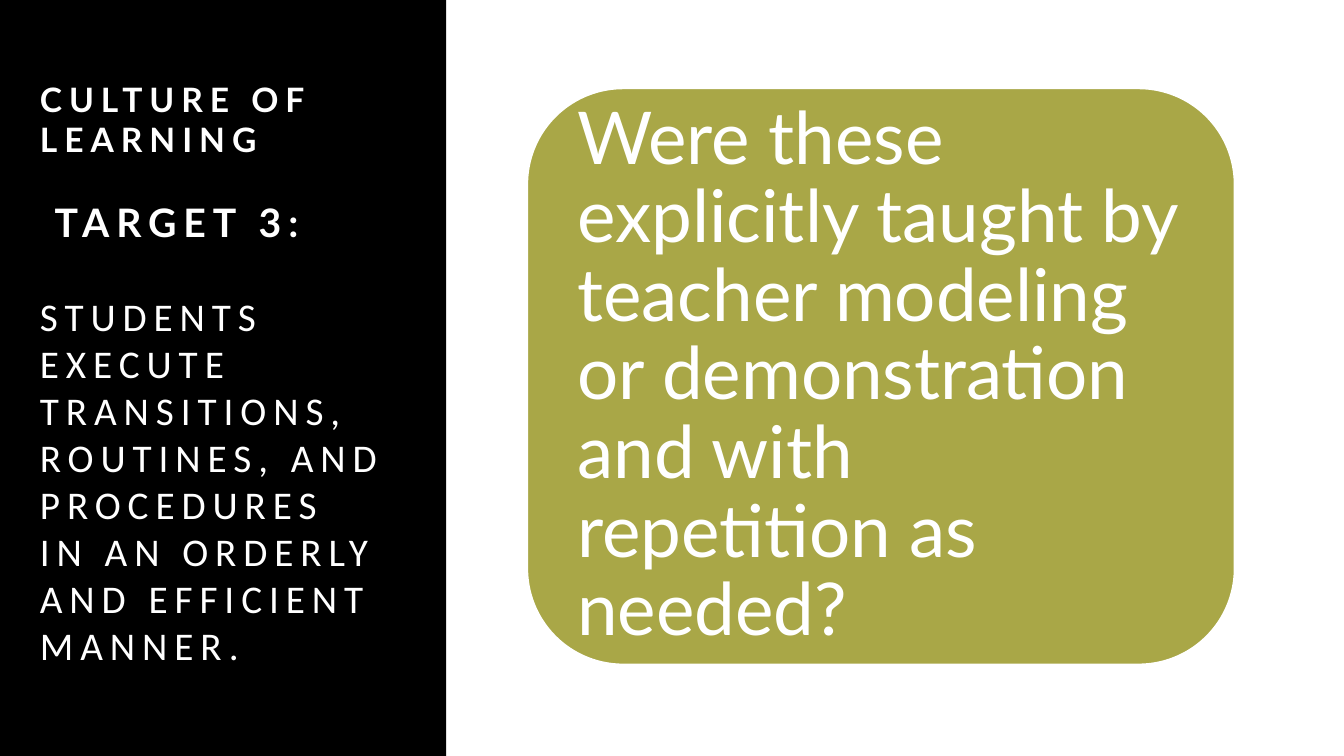
from dataclasses import dataclass

from pptx import Presentation
from pptx.dml.color import RGBColor
from pptx.enum.shapes import MSO_SHAPE
from pptx.enum.text import MSO_ANCHOR, PP_ALIGN
from pptx.util import Emu, Pt

EMU_PER_PX = 9525
BLACK = RGBColor(0x00, 0x00, 0x00)
WHITE = RGBColor(0xFF, 0xFF, 0xFF)
OLIVE = RGBColor(0xA9, 0xA7, 0x47)
RECTANGLE = MSO_SHAPE.RECTANGLE
ROUNDED = MSO_SHAPE.ROUNDED_RECTANGLE
TOP, MIDDLE = MSO_ANCHOR.TOP, MSO_ANCHOR.MIDDLE
LEFT = PP_ALIGN.LEFT
LETTER_SPACING = "500"  # hundredths of a point


@dataclass(frozen=True)
class Passage:
    text: str
    font: str
    size: int
    bold: bool = False
    space_before: int = 0
    indent: int = 0
    spaced: bool = True
    line_spacing: float = 1.0


@dataclass(frozen=True)
class Block:
    kind: MSO_SHAPE
    box: tuple[int, int, int, int]
    fill: RGBColor


PANEL = Block(RECTANGLE, (0, 0, 425, 720), BLACK)
CARD = Block(ROUNDED, (502, 84, 674, 549), OLIVE)
TARGET_BOX = (38, 75, 329, 562)
TARGET = [
    Passage("CULTURE OF LEARNING", "Lato", 24, bold=True),
    Passage("TARGET 3:", "Lato", 28, bold=True, space_before=28, indent=14),
    Passage(
        "STUDENTS EXECUTE TRANSITIONS, ROUTINES, AND PROCEDURES "
        "IN AN ORDERLY AND EFFICIENT MANNER.",
        "Calibri", 28, space_before=33,
    ),
]
QUESTION = [
    Passage(
        "Were these explicitly taught by teacher modeling or demonstration "
        "and with repetition as needed?",
        "Lato", 52, spaced=False, line_spacing=0.9,
    ),
]


def px(length: int) -> Emu:
    return Emu(length * EMU_PER_PX)


def add_block(slide, block: Block):
    shape = slide.shapes.add_shape(block.kind, *map(px, block.box))
    shape.shadow.inherit = False
    shape.fill.solid()
    shape.fill.fore_color.rgb = block.fill
    shape.line.fill.background()
    return shape


def write(frame, passages: list[Passage], anchor: MSO_ANCHOR, inset: int) -> None:
    frame_format = {
        "word_wrap": True,
        "vertical_anchor": anchor,
        **{f"margin_{side}": px(inset) for side in ("left", "top", "right", "bottom")},
    }
    for name, value in frame_format.items():
        setattr(frame, name, value)
    for index, passage in enumerate(passages):
        paragraph = frame.add_paragraph() if index else frame.paragraphs[0]
        paragraph.alignment = LEFT
        paragraph.line_spacing = passage.line_spacing
        if passage.space_before:
            paragraph.space_before = Pt(passage.space_before)
        if passage.indent:
            paragraph._p.get_or_add_pPr().set("marL", str(px(passage.indent)))
        run = paragraph.add_run()
        run.text = passage.text
        font_format = {"name": passage.font, "size": Pt(passage.size), "bold": passage.bold}
        for name, value in font_format.items():
            setattr(run.font, name, value)
        run.font.color.rgb = WHITE
        if passage.spaced:
            run._r.get_or_add_rPr().set("spc", LETTER_SPACING)


def main() -> None:
    deck = Presentation()
    deck.slide_width, deck.slide_height = px(1280), px(720)
    slide = deck.slides.add_slide(deck.slide_layouts[6])

    add_block(slide, PANEL)
    target = slide.shapes.add_textbox(*map(px, TARGET_BOX))
    write(target.text_frame, TARGET, TOP, inset=0)

    card = add_block(slide, CARD)
    card.line.color.rgb = WHITE
    card.line.width = Pt(1.5)
    write(card.text_frame, QUESTION, MIDDLE, inset=21)

    deck.save("out.pptx")


if __name__ == "__main__":
    main()
